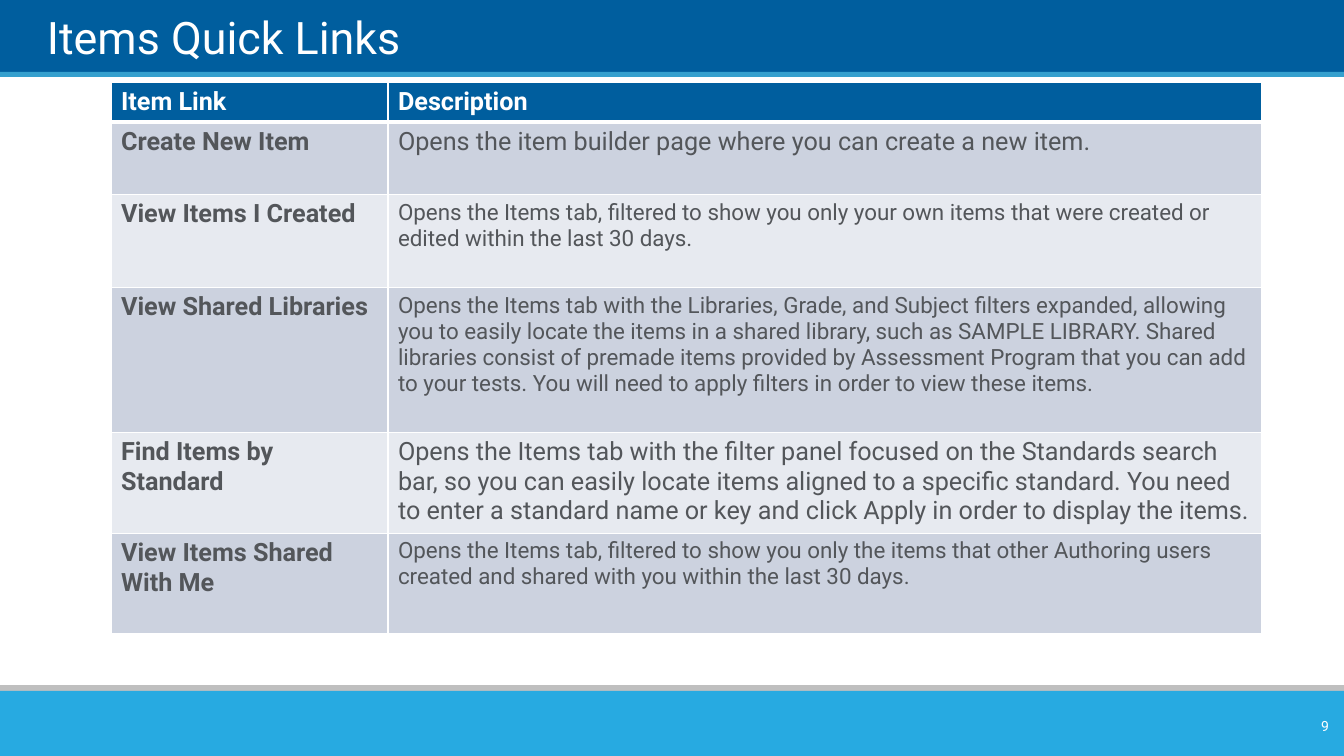
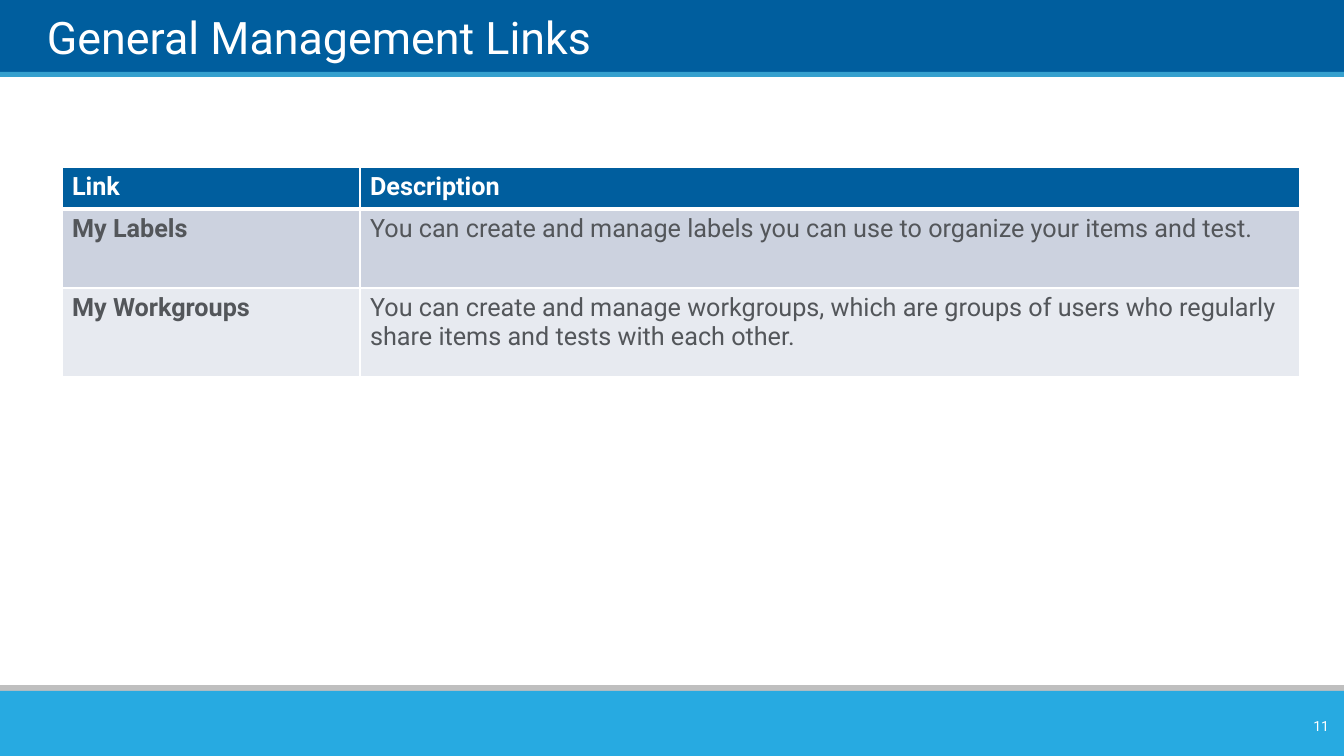
from pptx import Presentation
from pptx.dml.color import RGBColor
from pptx.enum.shapes import MSO_SHAPE
from pptx.enum.text import MSO_ANCHOR, PP_ALIGN
from pptx.oxml.ns import qn
from pptx.util import Emu, Pt
from lxml import etree

RECT = MSO_SHAPE.RECTANGLE
BOTTOM, MIDDLE = MSO_ANCHOR.BOTTOM, MSO_ANCHOR.MIDDLE
LEFT, RIGHT = PP_ALIGN.LEFT, PP_ALIGN.RIGHT

SCALE = 914400 / 100.8
WIDE, HIGH = 1344, 756
FONT = "Roboto"
WHITE, NAVY, GREY = "FFFFFF", "005E9E", "53565A"
STRIPES = ("CCD2DF", "E7EAF0")
BANDS = (
    (-1, 76, NAVY),
    (72, 5, "35A0CE"),
    (685, 14, "BFBFBF"),
    (691, 65, "27AAE1"),
)

ITEMS = (
    ("Item Link", "Description", 18, 38),
    ("Create New Item",
     "Opens the item builder page where you can create a new item.", 18, 72),
    ("View Items I Created",
     "Opens the Items tab, filtered to show you only your own items that were "
     "created or edited within the last 30 days.", 16, 93),
    ("View Shared Libraries",
     "Opens the Items tab with the Libraries, Grade, and Subject filters "
     "expanded, allowing you to easily locate the items in a shared library, "
     "such as SAMPLE LIBRARY. Shared libraries consist of premade items "
     "provided by Assessment Program that you can add to your tests. You will "
     "need to apply filters in order to view these items.", 16, 145),
    ("Find Items by Standard",
     "Opens the Items tab with the filter panel focused on the Standards "
     "search bar, so you can easily locate items aligned to a specific "
     "standard. You need to enter a standard name or key and click Apply in "
     "order to display the items.", 18, 98),
    ("View Items Shared With Me",
     "Opens the Items tab, filtered to show you only the items that other "
     "Authoring users created and shared with you within the last 30 days.",
     16, 100),
)
GENERAL = (
    ("Link", "Description", 18, 42),
    ("My Labels",
     "You can create and manage labels you can use to organize your items "
     "and test.", 18, 79),
    ("My Workgroups",
     "You can create and manage workgroups, which are groups of users who "
     "regularly share items and tests with each other.", 18, 89),
)


def px(count):
    """Turn pixels into EMU."""
    return Emu(round(count * SCALE))


def color(code):
    """Turn a hex string into a colour."""
    return RGBColor.from_string(code)


def write(frame, text, size, code, bold=False, align=LEFT):
    """Put one styled paragraph into a text frame."""
    para = frame.paragraphs[0]
    para.text = text
    para.alignment = align
    font = para.font
    font.name, font.size, font.bold = FONT, Pt(size), bold
    font.color.rgb = color(code)


def add_band(slide, top, height, code):
    """Draw a plain band across the slide."""
    band = slide.shapes.add_shape(RECT, 0, px(top), px(WIDE), px(height))
    band.shadow.inherit = False
    band.fill.solid()
    band.fill.fore_color.rgb = color(code)
    band.line.fill.background()


def add_text(slide, box, text, size, anchor, align=LEFT):
    """Add a white text box without margins."""
    frame = slide.shapes.add_textbox(*map(px, box)).text_frame
    frame.word_wrap = True
    frame.vertical_anchor = anchor
    frame.margin_left = frame.margin_right = 0
    frame.margin_top = frame.margin_bottom = 0
    write(frame, text, size, WHITE, align=align)


def add_edges(cell, base):
    """Give a cell white borders with its own bottom width."""
    props = cell._tc.get_or_add_tcPr()
    for side, width in (("L", 1), ("R", 1), ("T", 1), ("B", base)):
        line = etree.SubElement(props, qn("a:ln" + side), w=str(Pt(width)))
        fill = etree.SubElement(line, qn("a:solidFill"))
        etree.SubElement(fill, qn("a:srgbClr"), val=WHITE)


def fill_cell(cell, text, size, ink, back, bold, base):
    """Style one table cell and set its text."""
    add_edges(cell, base)
    cell.fill.solid()
    cell.fill.fore_color.rgb = color(back)
    write(cell.text_frame, text, size, ink, bold)


def add_links(slide, left, top, widths, rows):
    """Add a table of links with a header and striped rows."""
    height = sum(row[-1] for row in rows)
    box = map(px, (left, top, sum(widths), height))
    table = slide.shapes.add_table(len(rows), len(widths), *box).table
    table.horz_banding = False
    for column, width in zip(table.columns, widths):
        column.width = px(width)
    for index, (link, about, size, tall) in enumerate(rows):
        head = index == 0
        ink = WHITE if head else GREY
        back = NAVY if head else STRIPES[(index - 1) % 2]
        base = 3 if head else 1
        table.rows[index].height = px(tall)
        fill_cell(table.cell(index, 0), link, 18, ink, back, True, base)
        fill_cell(table.cell(index, 1), about, size, ink, back, head, base)


def add_page(deck, title, number):
    """Add a slide with bands, title and page number."""
    slide = deck.slides.add_slide(deck.slide_layouts[6])
    for band in BANDS:
        add_band(slide, *band)
    add_text(slide, (47, 7, 1253, 57), title, 32, BOTTOM)
    add_text(slide, (1261, 711, 68, 30), str(number), 10, MIDDLE, RIGHT)
    return slide


def main():
    """Build and save the deck."""
    deck = Presentation()
    deck.slide_width, deck.slide_height = px(WIDE), px(HIGH)
    page = add_page(deck, "Items Quick Links", 9)
    add_links(page, 111, 82, (277, 874), ITEMS)
    page = add_page(deck, "General Management Links", 11)
    add_links(page, 62, 167, (298, 940), GENERAL)
    deck.save("out.pptx")


if __name__ == "__main__":
    main()
